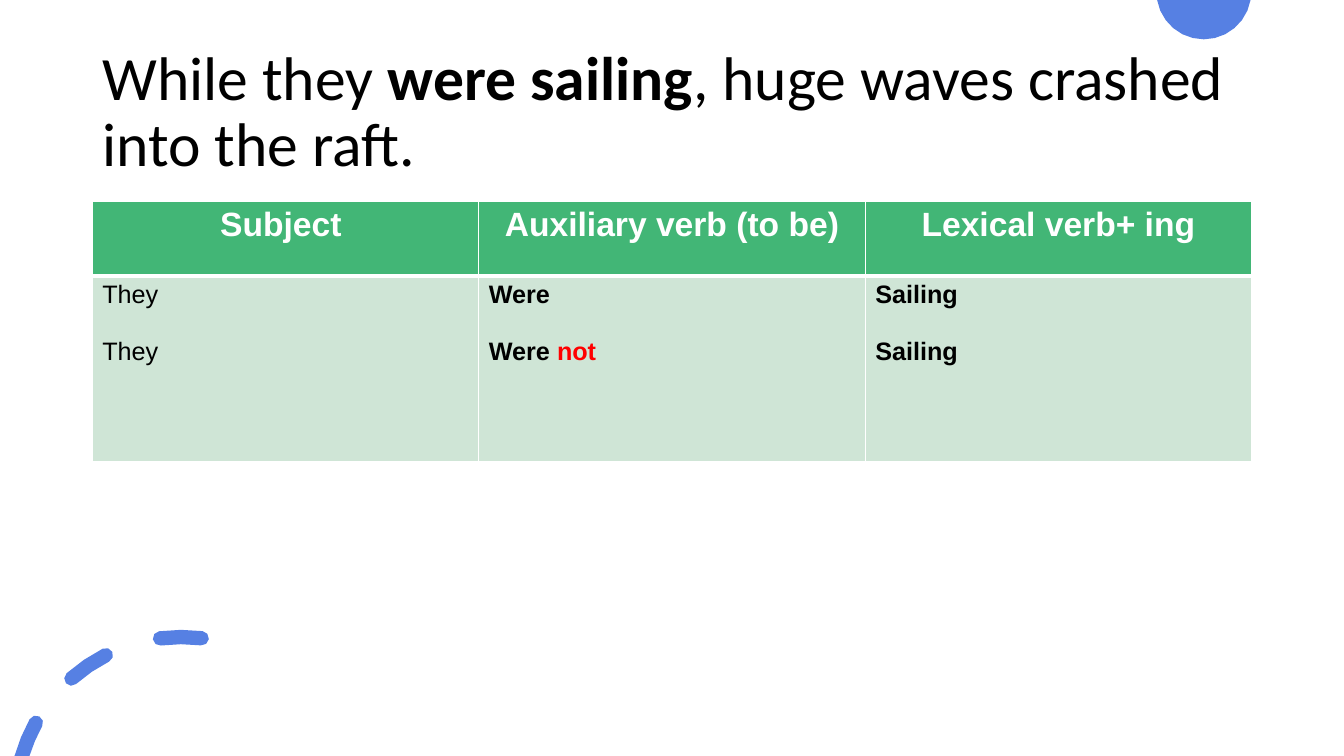
from math import asin, cos, degrees, radians, sin

from lxml.etree import SubElement
from pptx import Presentation
from pptx.dml.color import RGBColor
from pptx.enum.text import MSO_ANCHOR as Anchor, MSO_AUTO_SIZE as AutoSize, PP_ALIGN as Align
from pptx.oxml.ns import qn
from pptx.util import Inches, Pt

BLUE = RGBColor(0x56, 0x80, 0xE3)
GREEN = RGBColor(0x42, 0xB6, 0x76)
PALE_GREEN = RGBColor(0xCF, 0xE5, 0xD6)
WHITE = RGBColor(0xFF, 0xFF, 0xFF)
BLACK = RGBColor(0, 0, 0)
RED = RGBColor(0xFF, 0, 0)


def write(paragraph, text, font="Arial", size=18, color=BLACK, bold=False):
    run = paragraph.add_run()
    run.text = text
    run.font.name = font
    run.font.size = Pt(size)
    run.font.color.rgb = color
    run.font.bold = bold


def arc(center, radius, start, end, steps):
    """Points from one angle to another, counterclockwise in degrees."""
    angles = [radians(start + (end - start) * i / steps) for i in range(steps + 1)]
    return [(center[0] + radius * cos(a), center[1] - radius * sin(a)) for a in angles]


class GrammarSlide:
    """All lengths are percentages of the slide's height."""
    LEFT, WIDTH = 12.2, 153.33

    def __init__(self, deck):
        self.unit = deck.slide_height / 100
        self.slide = deck.slides.add_slide(deck.slide_layouts[5])

    def size(self, length):
        return round(length * self.unit)

    def title(self, pieces, top, height):
        title = self.slide.shapes.title
        title.left, title.top = self.size(self.LEFT), self.size(top)
        title.width, title.height = self.size(self.WIDTH), self.size(height)
        frame = title.text_frame
        frame.word_wrap = True
        frame.auto_size = AutoSize.NONE
        frame.vertical_anchor = Anchor.MIDDLE
        line = frame.paragraphs[0]
        line.alignment = Align.LEFT
        line.line_spacing = 0.9
        for text, bold in pieces:
            write(line, text, font="Calibri", size=44, bold=bold)

    def outline(self, contours, color):
        first, *others = [[(self.size(x), self.size(y)) for x, y in c] for c in contours]
        builder = self.slide.shapes.build_freeform(*first[0])
        builder.add_line_segments(first[1:], close=True)
        for contour in others:
            builder.move_to(*contour[0])
            builder.add_line_segments(contour[1:], close=True)
        shape = builder.convert_to_shape()
        shape.shadow.inherit = False
        shape.fill.solid()
        shape.fill.fore_color.rgb = color
        shape.line.fill.background()

    def borders(self, cell, **widths):
        props = cell._tc.get_or_add_tcPr()
        for position, side in enumerate("LRTB"):
            line = props.makeelement(qn(f"a:ln{side}"), {"w": str(Pt(widths.get(side, 1)))})
            fill = SubElement(line, qn("a:solidFill"))
            SubElement(fill, qn("a:srgbClr"), val=str(WHITE))
            props.insert(position, line)

    def table(self, headings, columns, top, row_heights):
        table = self.slide.shapes.add_table(
            2, len(headings), self.size(self.LEFT), self.size(top),
            self.size(self.WIDTH), self.size(sum(row_heights))).table
        for row, height in zip(table.rows, row_heights):
            row.height = self.size(height)
        for i, (heading, entries) in enumerate(zip(headings, columns)):
            table.columns[i].width = self.size(self.WIDTH / len(headings))
            head, body = table.cell(0, i), table.cell(1, i)
            for cell, color in ((head, GREEN), (body, PALE_GREEN)):
                cell.margin_top = self.size(0.53)
                cell.fill.solid()
                cell.fill.fore_color.rgb = color
            self.borders(head, B=3)
            self.borders(body, T=3)

            label = head.text_frame.paragraphs[0]
            label.alignment = Align.CENTER
            write(label, heading, size=24, color=WHITE, bold=True)

            for n, entry in enumerate(entries):
                frame = body.text_frame
                line = frame.add_paragraph() if n else frame.paragraphs[0]
                line.space_before = Pt(20.7 if n else 0)
                for text, style in entry:
                    write(line, text, **style)


def dash(center, radius, half, start, end):
    """A round-ended piece of a ring, cut flat at the slide's bottom edge."""
    def limit(r):
        return min(end, 180 - degrees(asin((center[1] - 100) / r)))

    def cap(angle, first):
        middle = arc(center, radius, angle, angle, 1)[0]
        return arc(middle, half, first, first + 180, 4)[1:-1]

    outer, inner = radius + half, radius - half
    last_cap = cap(end, end) if limit(outer) == end else []
    return (cap(start, start - 180) + arc(center, outer, start, limit(outer), 2)
            + last_cap + arc(center, inner, limit(inner), start, 2))


def main():
    deck = Presentation()
    deck.slide_width, deck.slide_height = Inches(13.33), Inches(7.5)
    page = GrammarSlide(deck)

    # Circle cut by the top edge
    disc_center, disc_radius = (159.2, -1.07), 6.27
    tilt = degrees(asin(-disc_center[1] / disc_radius))
    page.outline([arc(disc_center, disc_radius, 180 + tilt, 360 - tilt, 12)], BLUE)

    # Dashed ring in the lower left corner
    page.outline([dash((24, 106.27), 22, 0.95, start, start + 14.4)
                  for start in range(83, 152, 34)], BLUE)

    # Example sentence
    page.title([("While they ", False), ("were sailing", True),
                (", huge waves crashed into the raft.", False)], top=5.33, height=19.33)

    # Parts of the verb phrase
    plain, strong = {}, {"bold": True}
    page.table(
        ["Subject ", "Auxiliary verb (to be)", "Lexical verb+ ing"],
        [[[("They", plain)]] * 2,
         [[("Were", strong)], [("Were ", strong), ("not", {"bold": True, "color": RED})]],
         [[("Sailing", strong)]] * 2],
        top=26.67, row_heights=(9.87, 24.53))

    deck.save("out.pptx")


if __name__ == "__main__":
    main()
